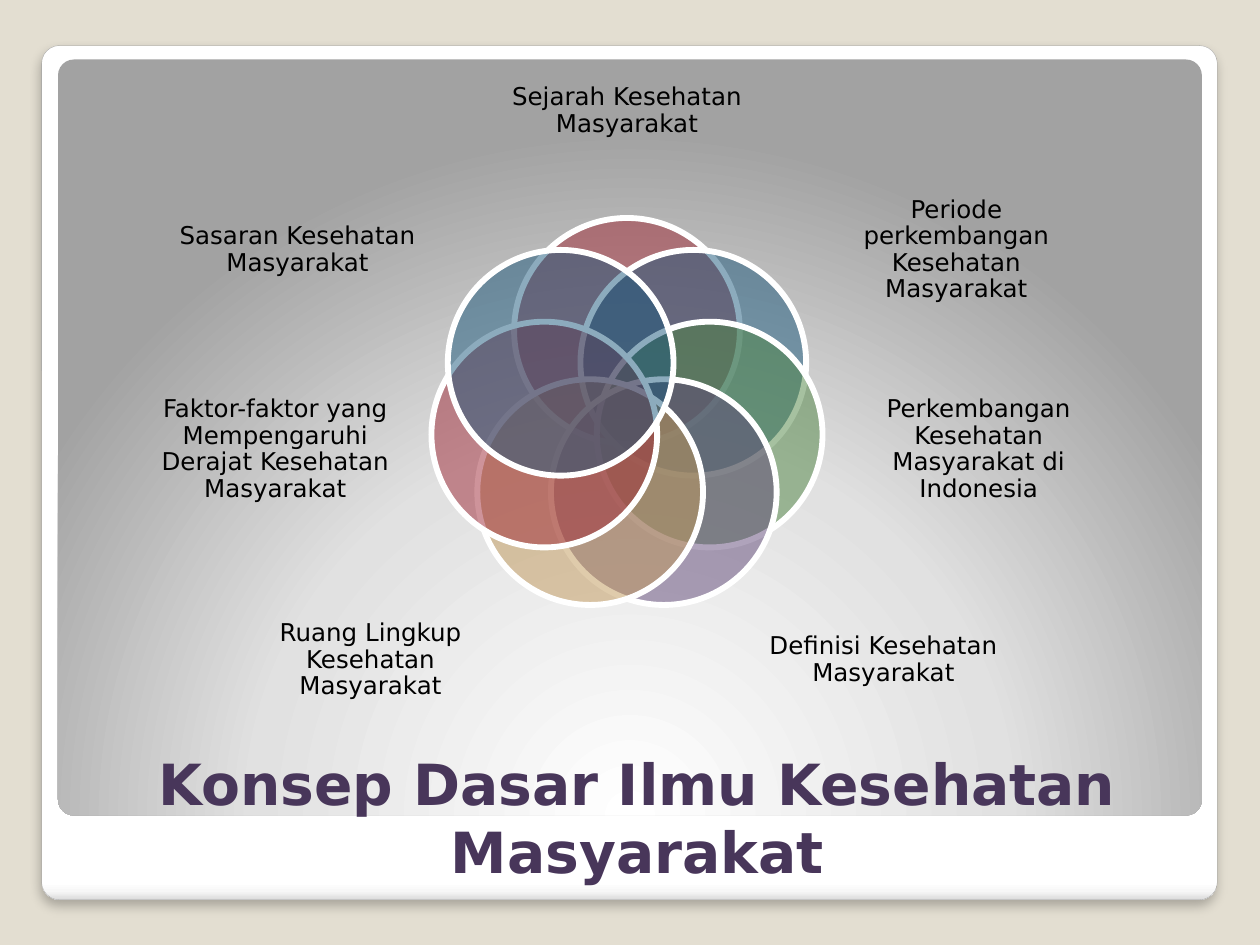
from math import cos, pi, sin

from lxml.etree import SubElement
from pptx import Presentation
from pptx.dml.color import RGBColor
from pptx.enum.shapes import MSO_SHAPE
from pptx.enum.text import MSO_ANCHOR, PP_ALIGN
from pptx.oxml.ns import qn
from pptx.util import Cm, Pt

FONT = "DejaVu Sans"
TOPICS = [
    ("Sejarah Kesehatan Masyarakat", "9F2936"),
    ("Periode perkembangan Kesehatan Masyarakat", "1B587C"),
    ("Perkembangan Kesehatan Masyarakat di Indonesia", "4E8542"),
    ("Definisi Kesehatan Masyarakat", "604878"),
    ("Ruang Lingkup Kesehatan Masyarakat", "C19859"),
    ("Faktor-faktor yang Mempengaruhi Derajat Kesehatan Masyarakat", "9F2936"),
    ("Sasaran Kesehatan Masyarakat", "1B587C"),
]
LABEL_ROWS = [
    (0, 0, 5.23, 2.79),
    (6.64, 2.67, 4.93, 3.07),
    (7.09, 6.58, 4.85, 3.28),
    (5.17, 10.97, 5.23, 3),
]


def color(hex_string):
    return RGBColor.from_string(hex_string)


def style_text(frame, size, hex_string, bold=False):
    frame.word_wrap = True
    paragraph = frame.paragraphs[0]
    paragraph.alignment = PP_ALIGN.CENTER
    font = paragraph.runs[0].font
    font.name, font.size, font.bold = FONT, Pt(size), bold
    font.color.rgb = color(hex_string)


def add_gradient(panel, stops):
    panel.fill.background()
    properties = panel._element.spPr
    empty_fill = properties.find(qn("a:noFill"))
    gradient = SubElement(properties, qn("a:gradFill"), rotWithShape="1")
    properties.replace(empty_fill, gradient)
    stop_list = SubElement(gradient, qn("a:gsLst"))
    for position, hex_string in stops:
        stop = SubElement(stop_list, qn("a:gs"), pos=str(position * 1000))
        SubElement(stop, qn("a:srgbClr"), val=hex_string)
    return gradient


def add_panel(slide, left, top, width, height):
    panel = slide.shapes.add_shape(
        MSO_SHAPE.ROUNDED_RECTANGLE, Cm(left), Cm(top), Cm(width), Cm(height))
    panel.adjustments[0] = 0.021
    panel.shadow.inherit = False
    panel.line.fill.background()
    return panel


def add_frame(slide, left, top, width, height):
    card = add_panel(slide, left, top, width, height)
    gradient = add_gradient(
        card, [(0, "FFFFFF"), (98, "FFFFFF"), (99, "F7F7F7"), (100, "DADADA")])
    SubElement(gradient, qn("a:lin"), ang="5400000", scaled="0")
    card.line.color.rgb = color("A4A4A4")
    card.line.width = Pt(0.16)
    effects = card._element.spPr.find(qn("a:effectLst"))
    shadow = SubElement(
        effects, qn("a:outerShdw"), blurRad=str(Pt(6)), dist=str(Pt(4)),
        dir="5400000", algn="t", rotWithShape="0")
    tint = SubElement(shadow, qn("a:srgbClr"), val="000000")
    SubElement(tint, qn("a:alpha"), val="25000")

    stage = add_panel(slide, left + 0.33, top + 0.28, width - 0.64, height - 1.98)
    gradient = add_gradient(stage, [(0, "FFFFFF"), (55, "E1E1E1"), (100, "A2A2A2")])
    focus = SubElement(gradient, qn("a:path"), path="circle")
    SubElement(focus, qn("a:fillToRect"), l="50000", t="175000", r="50000", b="-75000")


def add_title(slide, left, top, width, height):
    title = slide.shapes.title
    title.left, title.top, title.width, title.height = (
        Cm(length) for length in (left, top, width, height))
    title.text_frame.text = "Konsep Dasar Ilmu Kesehatan Masyarakat"
    title.text_frame.vertical_anchor = MSO_ANCHOR.BOTTOM
    style_text(title.text_frame, 32.4, "48365A", bold=True)
    slide.shapes._spTree.append(title._element)


def add_petal(slide, center_x, center_y, diameter, hex_string):
    petal = slide.shapes.add_shape(
        MSO_SHAPE.OVAL, Cm(center_x - diameter / 2), Cm(center_y - diameter / 2),
        Cm(diameter), Cm(diameter))
    petal.shadow.inherit = False
    petal.fill.solid()
    petal.fill.fore_color.rgb = color(hex_string)
    tint = petal._element.spPr.find(qn("a:solidFill")).find(qn("a:srgbClr"))
    SubElement(tint, qn("a:alpha"), val="50000")
    petal.line.color.rgb = color("FFFFFF")
    petal.line.width = Pt(3.35)


def add_label(slide, topic, center_x, top, width, height):
    label = slide.shapes.add_textbox(
        Cm(center_x - width / 2), Cm(top), Cm(width), Cm(height))
    frame = label.text_frame
    frame.text = topic
    frame.vertical_anchor = MSO_ANCHOR.MIDDLE
    frame.margin_left = frame.margin_right = frame.margin_top = frame.margin_bottom = 0
    frame.paragraphs[0].line_spacing = 0.9
    style_text(frame, 14, "000000")


def add_flower(slide, left, top, width):
    center_x, center_y = left + width / 2, top + 7.54
    orbit, diameter = 1.71, 4.55
    count = len(TOPICS)
    for index, (topic, hex_string) in enumerate(TOPICS):
        angle = 2 * pi * index / count
        add_petal(slide, center_x + orbit * sin(angle), center_y - orbit * cos(angle),
                  diameter, hex_string)
        on_right = index <= count // 2
        offset, label_top, label_width, label_height = LABEL_ROWS[
            index if on_right else count - index]
        add_label(slide, topic, center_x + (offset if on_right else -offset),
                  top + label_top, label_width, label_height)


def main():
    presentation = Presentation()
    presentation.slide_width, presentation.slide_height = Cm(25.4), Cm(19.05)
    slide = presentation.slides.add_slide(presentation.slide_layouts[5])
    slide.background.fill.solid()
    slide.background.fill.fore_color.rgb = color("E3DED1")
    add_frame(slide, 0.84, 0.92, 23.7, 17.22)
    add_title(slide, 1.48, 15.04, 22.73, 2.92)
    add_flower(slide, 3.14, 0.84, 19)
    presentation.save("out.pptx")


if __name__ == "__main__":
    main()
